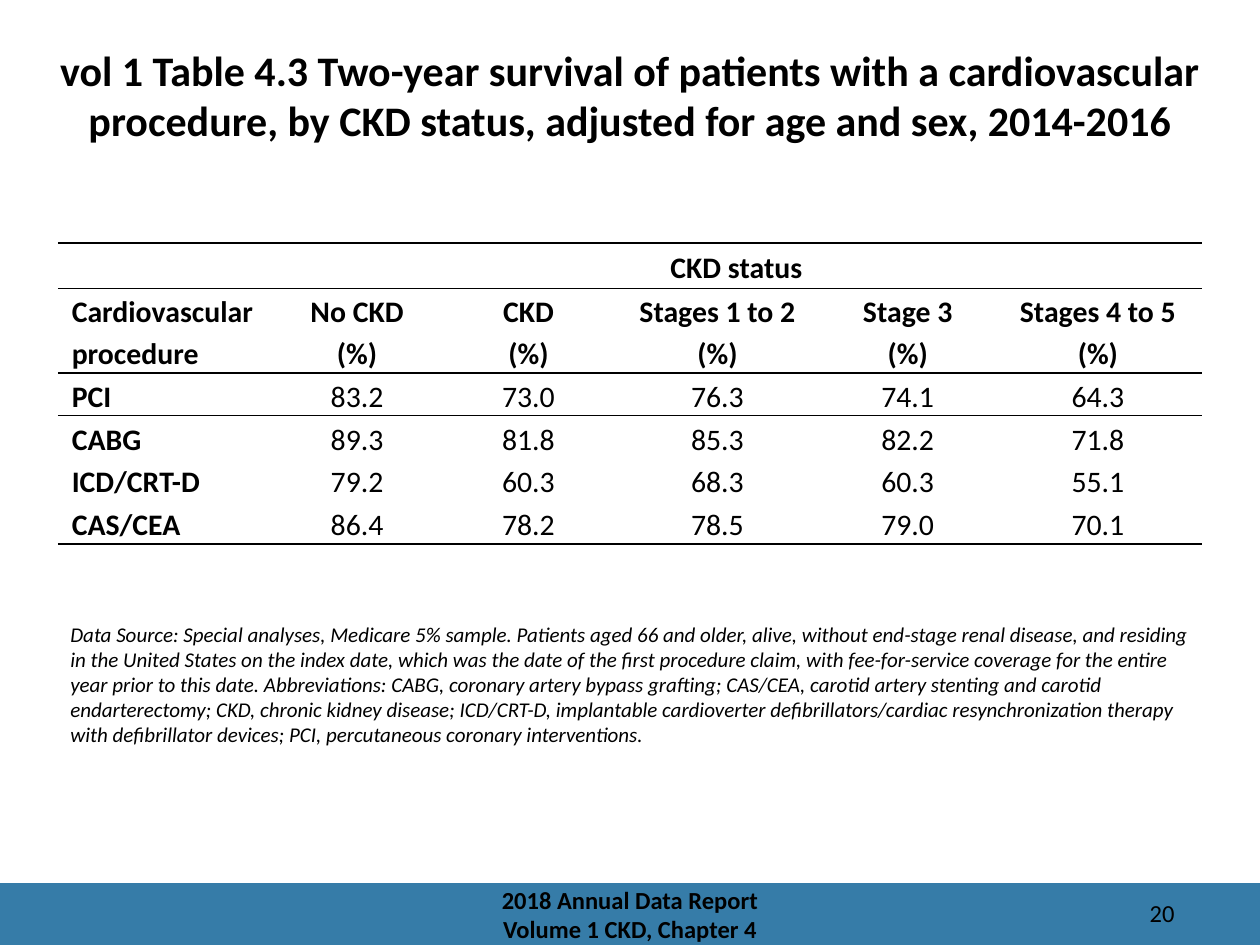
"""Builds a slide with a table of two-year survival by CKD status."""
from dataclasses import dataclass

from lxml.etree import SubElement
from pptx import Presentation
from pptx.dml.color import RGBColor
from pptx.enum.shapes import MSO_SHAPE
from pptx.enum.text import MSO_ANCHOR, PP_ALIGN
from pptx.oxml.ns import qn
from pptx.slide import Slide
from pptx.table import _Cell
from pptx.text.text import _Paragraph
from pptx.util import Inches, Pt

BLACK = RGBColor(0x00, 0x00, 0x00)
BLUE = RGBColor(0x36, 0x7C, 0xA8)
FONT = "Calibri"
NO_STYLE = "{2D5ABB26-0587-4C30-8999-92F81FD0307C}"

COLUMN_WIDTHS = (1.69, 1.37, 1.35, 1.65, 1.37, 1.65)
ROW_HEIGHTS = (0.36, 0.67, 0.34, 0.34, 0.34, 0.34)
ROWS = (
    ("", "CKD status", "", "", "", ""),
    ("Cardiovascular procedure", "No CKD\v(%)", "CKD\v(%)",
     "Stages 1 to 2\v(%)", "Stage 3\v(%)", "Stages 4 to 5\v(%)"),
    ("PCI", "83.2", "73.0", "76.3", "74.1", "64.3"),
    ("CABG", "89.3", "81.8", "85.3", "82.2", "71.8"),
    ("ICD/CRT-D", "79.2", "60.3", "68.3", "60.3", "55.1"),
    ("CAS/CEA", "86.4", "78.2", "78.5", "79.0", "70.1"),
)
HEADER_ROWS = 2
RULED_TOPS = (0, 1, 2)
RULED_BOTTOMS = (0, 1, 5)


@dataclass(frozen=True)
class Label:
    """A text box with one uniform text style."""
    text: str
    left: float
    top: float
    width: float
    height: float
    size: float
    align: PP_ALIGN = PP_ALIGN.CENTER
    anchor: MSO_ANCHOR = MSO_ANCHOR.TOP
    bold: bool = False
    italic: bool = False


LABELS = (
    Label("20", 8.42, 7.08, 1, 0.3, 14, PP_ALIGN.RIGHT),
    Label("Data Source: Special analyses, Medicare 5% sample. Patients aged 66 and older, "
          "alive, without end-stage renal disease, and residing in the United States on "
          "the index date, which was the date of the first procedure claim, with "
          "fee-for-service coverage for the entire year prior to this date. "
          "Abbreviations: CABG, coronary artery bypass grafting; CAS/CEA, carotid artery "
          "stenting and carotid endarterectomy; CKD, chronic kidney disease; ICD/CRT-D, "
          "implantable cardioverter defibrillators/cardiac resynchronization therapy "
          "with defibrillator devices; PCI, percutaneous coronary interventions.",
          0.46, 4.88, 9.08, 1.33, 12, PP_ALIGN.LEFT, italic=True),
    Label("vol 1 Table 4.3 Two-year survival of patients with a cardiovascular "
          "procedure, by CKD status, adjusted for age and sex, 2014-2016",
          0.31, 0.3, 9.38, 0.62, 24, bold=True),
    Label("2018 Annual Data Report\nVolume 1 CKD, Chapter 4",
          3.31, 7.01, 3.38, 0.49, 14, anchor=MSO_ANCHOR.MIDDLE, bold=True),
)


def style(para: _Paragraph, size: float, align: PP_ALIGN,
          bold: bool = False, italic: bool = False) -> None:
    """Set the alignment and font of a paragraph."""
    para.alignment = align
    para.font.name = FONT
    para.font.size = Pt(size)
    para.font.bold = bold
    para.font.italic = italic
    para.font.color.rgb = BLACK


def add_band(page: Slide) -> None:
    """Draw the footer band."""
    band = page.shapes.add_shape(
        MSO_SHAPE.RECTANGLE, Inches(0), Inches(7.01), Inches(10), Inches(0.49))
    band.shadow.inherit = False
    band.fill.solid()
    band.fill.fore_color.rgb = BLUE
    band.line.fill.background()


def add_label(page: Slide, label: Label) -> None:
    """Draw one text box."""
    box = page.shapes.add_textbox(Inches(label.left), Inches(label.top),
                                  Inches(label.width), Inches(label.height))
    frame = box.text_frame
    frame.word_wrap = True
    frame.vertical_anchor = label.anchor
    frame.text = label.text
    for para in frame.paragraphs:
        style(para, label.size, label.align, label.bold, label.italic)


def add_rule(cell: _Cell, edge: str) -> None:
    """Draw a one-point black border on an edge of a cell."""
    properties = cell._tc.get_or_add_tcPr()
    line = SubElement(properties, qn(f"a:{edge}"), w=str(Pt(1)))
    fill = SubElement(line, qn("a:solidFill"))
    SubElement(fill, qn("a:srgbClr"), val=str(BLACK))


def fill_cell(cell: _Cell, text: str, row: int, column: int) -> None:
    """Write and format one table cell."""
    cell.margin_left = cell.margin_right = Inches(0.11)
    cell.margin_top = cell.margin_bottom = 0
    cell.vertical_anchor = MSO_ANCHOR.MIDDLE
    if row in RULED_TOPS:
        add_rule(cell, "lnT")
    if row in RULED_BOTTOMS:
        add_rule(cell, "lnB")
    cell.fill.background()
    cell.text_frame.text = text
    para = cell.text_frame.paragraphs[0]
    para.line_spacing = 1.15
    style(para, 17, PP_ALIGN.CENTER if column else PP_ALIGN.LEFT,
          bold=row < HEADER_ROWS or column == 0)


def add_survival_table(page: Slide) -> None:
    """Draw the table of survival percentages."""
    table = page.shapes.add_table(
        len(ROWS), len(COLUMN_WIDTHS), Inches(0.46), Inches(1.93),
        Inches(sum(COLUMN_WIDTHS)), Inches(sum(ROW_HEIGHTS))).table
    table.first_row = table.horz_banding = False
    table._tbl.tblPr.find(qn("a:tableStyleId")).text = NO_STYLE
    for column, width in zip(table.columns, COLUMN_WIDTHS):
        column.width = Inches(width)
    for row, height in zip(table.rows, ROW_HEIGHTS):
        row.height = Inches(height)
    for row, texts in enumerate(ROWS):
        for column, text in enumerate(texts):
            fill_cell(table.cell(row, column), text, row, column)
    table.cell(0, 1).merge(table.cell(0, len(COLUMN_WIDTHS) - 1))


def main() -> None:
    """Build and save the deck."""
    deck = Presentation()
    deck.slide_width, deck.slide_height = Inches(10), Inches(7.5)
    page = deck.slides.add_slide(deck.slide_layouts[6])
    add_band(page)
    for label in LABELS:
        add_label(page, label)
    add_survival_table(page)
    deck.save("out.pptx")


if __name__ == "__main__":
    main()
